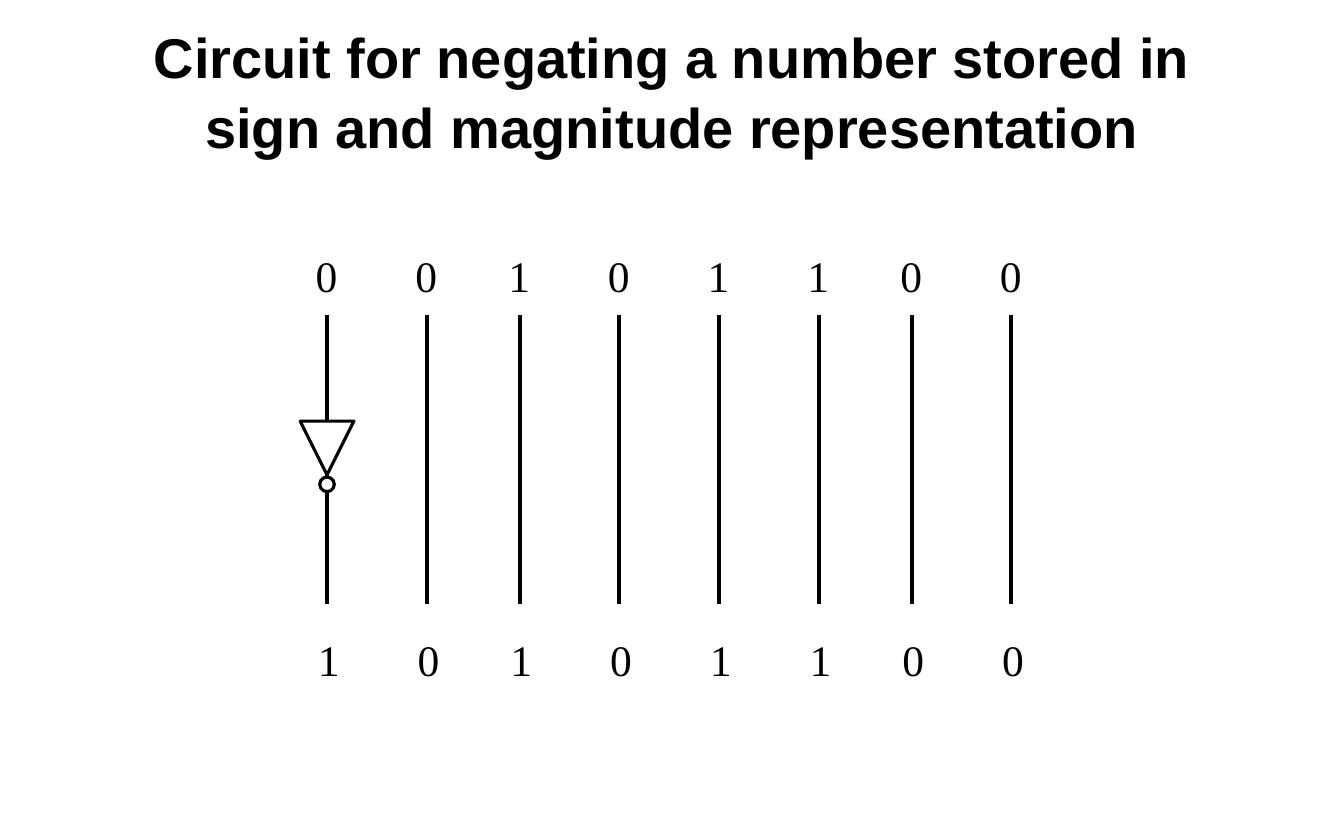
from pptx import Presentation, util as u
from pptx.dml.color import RGBColor
from pptx.enum import shapes, text
from pptx.oxml.ns import qn
from lxml import etree

# Content
TITLE = "Circuit for negating a number stored in sign and magnitude representation"
BITS_IN = "00101100"
BITS_OUT = "10101100"

THEME = {
    "ink": RGBColor(0, 0, 0), "paper": RGBColor(255, 255, 255),
    "title_font": "Arial", "title_size": 36,
    "bit_font": "Times New Roman", "bit_size": 28,
    "wire": 2.5, "gate": 2,
}

# Layout in inches
WIRE_X = [2.92, 3.81, 4.64, 5.53, 6.42, 7.31, 8.14, 9.03]
WIRE_TOP, WIRE_END = 2.81, 5.39
BIT_W, BIT_H = 0.4, 0.57
IN_TOP, OUT_TOP = 2.17, 5.6
IN_DX, OUT_DX = -0.2, -0.18
GATE_W, GATE_H, GATE_TOP = 0.48, 0.48, 3.76
BUBBLE, BUBBLE_TOP = 0.13, 4.26


def add_text(parent, words, box, font, size, bold=False, title=False):
    tb = parent.add_textbox(*map(u.Inches, box))
    tf = tb.text_frame
    tf.word_wrap = title
    p = tf.paragraphs[0]
    if title:
        tf.vertical_anchor = text.MSO_ANCHOR.MIDDLE
        p.alignment = text.PP_ALIGN.CENTER
        p.line_spacing = 1.04
    r = p.add_run()
    r.text = words
    r.font.name, r.font.size, r.font.bold = font, u.Pt(size), bold
    r.font.color.rgb = THEME["ink"]


def add_wire(parent, x):
    ln = parent.add_connector(shapes.MSO_CONNECTOR.STRAIGHT, u.Inches(x),
                              u.Inches(WIRE_TOP), u.Inches(x), u.Inches(WIRE_END))
    ln.line.color.rgb = THEME["ink"]
    ln.line.width = u.Pt(THEME["wire"])
    etree.SubElement(ln._element.spPr, qn("a:effectLst"))


def add_inverter(parent, x):
    left, right = x - GATE_W / 2, x + GATE_W / 2
    fb = parent.build_freeform(u.Inches(left), u.Inches(GATE_TOP))
    fb.add_line_segments([(u.Inches(right), u.Inches(GATE_TOP)),
                          (u.Inches(x), u.Inches(GATE_TOP + GATE_H))], close=True)
    triangle = fb.convert_to_shape()
    bubble = parent.add_shape(shapes.MSO_SHAPE.OVAL, u.Inches(x - BUBBLE / 2),
                              u.Inches(BUBBLE_TOP), u.Inches(BUBBLE), u.Inches(BUBBLE))
    for sp in (triangle, bubble):
        sp.shadow.inherit = False
        sp.fill.solid()
        sp.fill.fore_color.rgb = THEME["paper"]
        sp.line.color.rgb = THEME["ink"]
        sp.line.width = u.Pt(THEME["gate"])


def main():
    prs = Presentation()
    prs.slide_width, prs.slide_height = u.Inches(12), u.Inches(7.5)
    s = prs.slides.add_slide(prs.slide_layouts[6])

    # Title
    add_text(s.shapes, TITLE, (1, 0.1, 10, 1.4),
             THEME["title_font"], THEME["title_size"], bold=True, title=True)

    # One group per bit; only the sign bit passes through an inverter
    for i, (x, bit_in, bit_out) in enumerate(zip(WIRE_X, BITS_IN, BITS_OUT)):
        column = s.shapes.add_group_shape().shapes
        add_wire(column, x)
        if i == 0:
            add_inverter(column, x)
        for bit, dx, top in ((bit_in, IN_DX, IN_TOP), (bit_out, OUT_DX, OUT_TOP)):
            add_text(column, bit, (x + dx, top, BIT_W, BIT_H),
                     THEME["bit_font"], THEME["bit_size"])

    prs.save("out.pptx")


if __name__ == "__main__":
    main()
